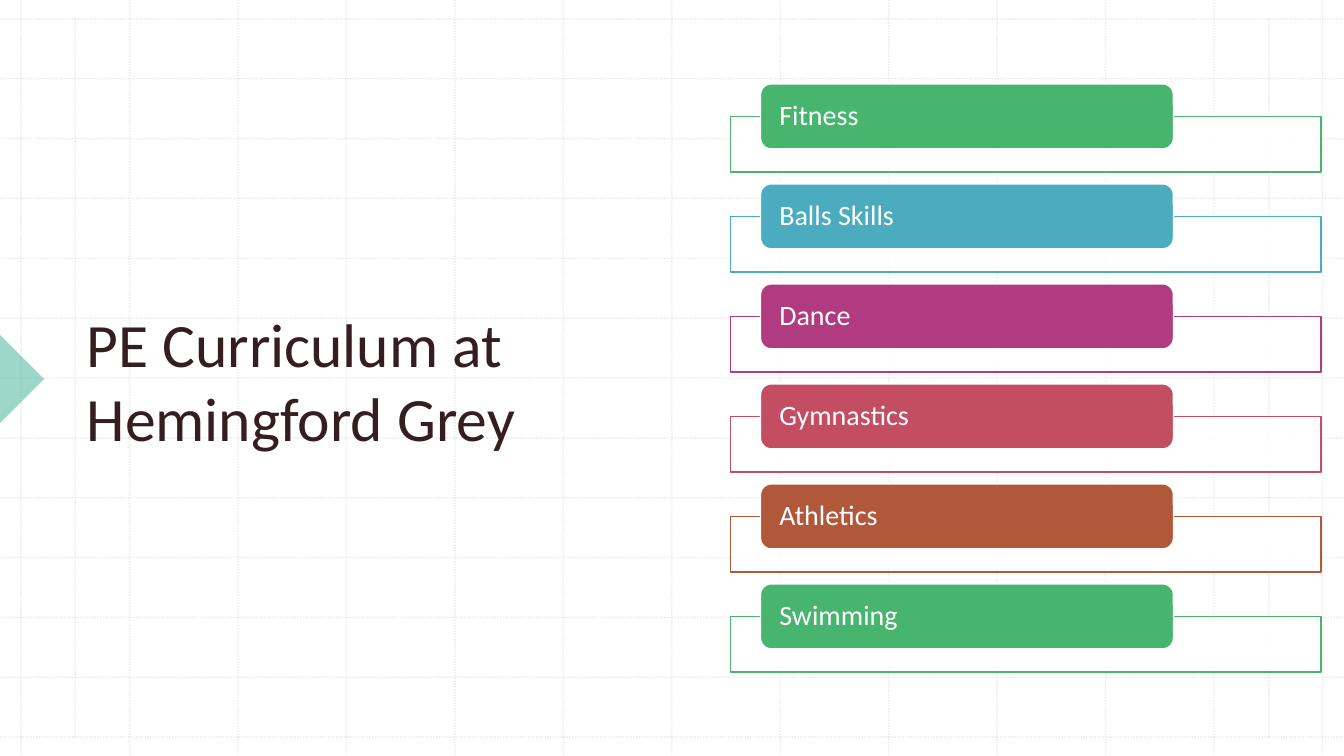
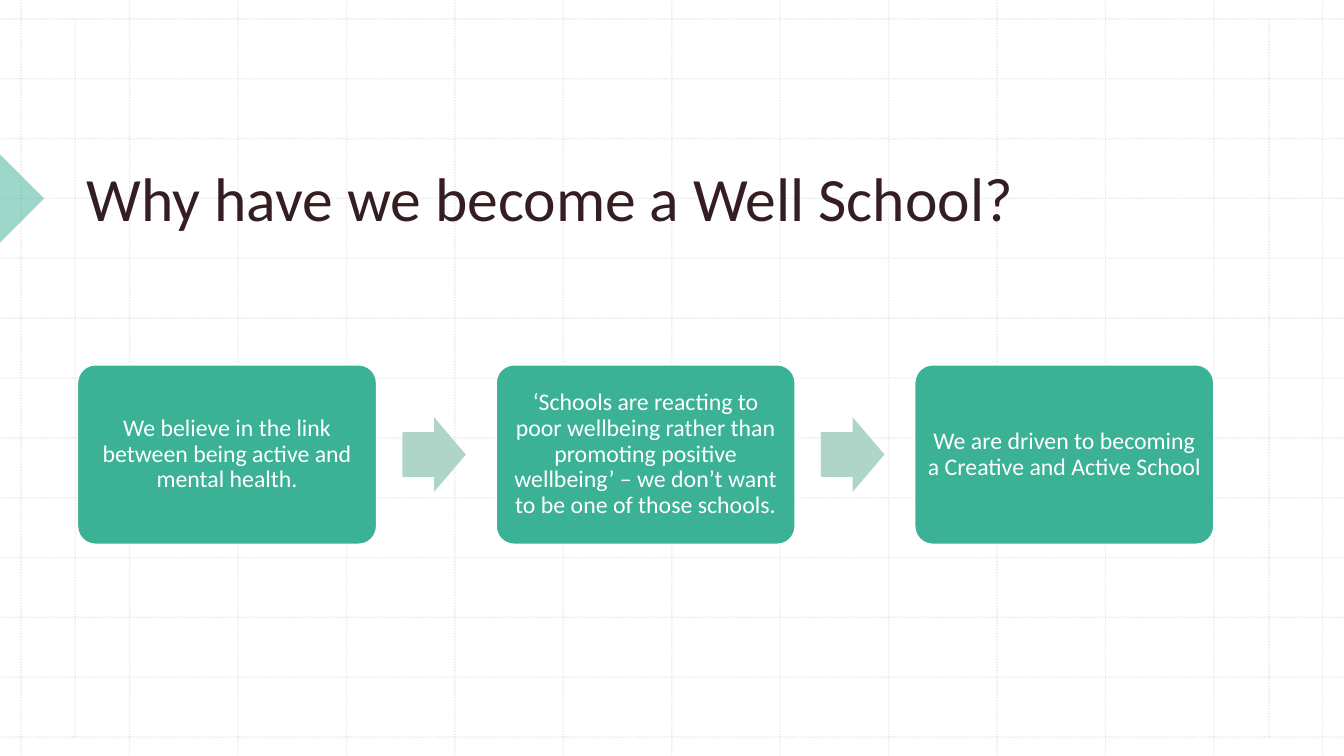
"""Build two slides on a school's PE curriculum and its Well School choice."""

from lxml import etree
from pptx import Presentation
from pptx.dml.color import RGBColor
from pptx.enum.dml import MSO_LINE
from pptx.enum.shapes import MSO_CONNECTOR, MSO_SHAPE
from pptx.enum.text import MSO_ANCHOR, MSO_AUTO_SIZE, PP_ALIGN
from pptx.oxml.ns import qn
from pptx.util import Pt

STRAIGHT = MSO_CONNECTOR.STRAIGHT
DOTTED = MSO_LINE.ROUND_DOT
RECTANGLE = MSO_SHAPE.RECTANGLE
ROUNDED = MSO_SHAPE.ROUNDED_RECTANGLE
TRIANGLE = MSO_SHAPE.RIGHT_TRIANGLE
ARROW = MSO_SHAPE.RIGHT_ARROW
LEFT, CENTER = PP_ALIGN.LEFT, PP_ALIGN.CENTER
MIDDLE, BOTTOM = MSO_ANCHOR.MIDDLE, MSO_ANCHOR.BOTTOM

FONT = "Calibri"
WIDTH, HEIGHT = 960, 540
COLORS = {
    "white": "FFFFFF",
    "title": "351E22",
    "grid": "BCBCBC",
    "teal": "3BB195",
    "pale teal": "AFD5C8",
    "green": "47B56D",
    "blue": "4BACC0",
    "purple": "B13B81",
    "red": "C34D61",
    "brown": "B1583B",
}


def write_text(shape, text, size, color="white", align=LEFT, anchor=MIDDLE,
               spacing=0.9, insets=(7.2, 3.6)):
    """Fill a shape with one formatted paragraph."""
    frame = shape.text_frame
    frame.word_wrap = True
    frame.auto_size = MSO_AUTO_SIZE.NONE
    frame.vertical_anchor = anchor
    frame.margin_left = frame.margin_right = Pt(insets[0])
    frame.margin_top = frame.margin_bottom = Pt(insets[1])
    frame.text = text
    paragraph = frame.paragraphs[0]
    paragraph.alignment = align
    paragraph.line_spacing = spacing
    paragraph.font.name = FONT
    paragraph.font.size = Pt(size)
    paragraph.font.color.rgb = RGBColor.from_string(COLORS[color])


def add_box(slide, kind, left, top, width, height, fill, line=None, opacity=100):
    """Add a filled preset shape with an optional outline."""
    shape = slide.shapes.add_shape(kind, Pt(left), Pt(top), Pt(width), Pt(height))
    shape.shadow.inherit = False
    shape.fill.solid()
    shape.fill.fore_color.rgb = RGBColor.from_string(COLORS[fill])
    if opacity < 100:
        color = next(shape.element.iter(qn("a:srgbClr")))
        etree.SubElement(color, qn("a:alpha"), val=str(opacity * 1000))
    if line:
        shape.line.color.rgb = RGBColor.from_string(COLORS[line])
        shape.line.width = Pt(1)
    else:
        shape.line.fill.background()
    return shape


presentation = Presentation()
presentation.slide_width, presentation.slide_height = Pt(WIDTH), Pt(HEIGHT)
layout = presentation.slide_layouts[5]
for placeholder in list(layout.placeholders):
    if placeholder.placeholder_format.idx != 0:
        layout.shapes.element.remove(placeholder.element)

pages = [
    ("PE Curriculum at Hemingford Grey", 426, 428.4, MIDDLE, 270.7),
    ("Why have we become a Well School?", 813, 113.8, BOTTOM, 141.8),
]
marker_size = 44.6
slides = []
for text, width, height, anchor, marker_middle in pages:
    slide = presentation.slides.add_slide(layout)
    title = slide.shapes.title
    title.left, title.top = Pt(54.7), Pt(56.9)
    title.width, title.height = Pt(width), Pt(height)
    write_text(title, text, 44, color="title", anchor=anchor, spacing=1.0)
    marker = add_box(slide, TRIANGLE, -marker_size / 2, marker_middle - marker_size / 2,
                     marker_size, marker_size, "teal", opacity=50)
    marker.rotation = 225
    slides.append(slide)
curriculum, reasons = slides

grid_left, grid_top, column, row = 15.1, 13.5, 77.46, 42.75
grid_bottom = grid_top + 12 * row
grid = [(grid_left + i * column, 0, grid_left + i * column, HEIGHT) for i in range(13)]
grid += [(0, grid_top + i * row, WIDTH, grid_top + i * row) for i in range(13)]
grid += [(x, grid_top, x, grid_bottom) for x in (53.8, 906.5)]
grid_lines = []
for ends in grid:
    connector = curriculum.shapes.add_connector(STRAIGHT, *[Pt(value) for value in ends])
    connector.line.color.rgb = RGBColor.from_string(COLORS["grid"])
    connector.line.width = Pt(1)
    connector.line.dash_style = DOTTED
    color = next(connector.element.iter(qn("a:srgbClr")))
    etree.SubElement(color, qn("a:alpha"), val="30000")
    etree.SubElement(connector.element.spPr, qn("a:effectLst"))
    grid_lines.append(connector.element)
for grid_line in grid_lines:
    layout.shapes.element.append(grid_line)

activities = [
    ("Fitness", "green"),
    ("Balls Skills", "blue"),
    ("Dance", "purple"),
    ("Gymnastics", "red"),
    ("Athletics", "brown"),
    ("Swimming", "green"),
]
for index, (activity, color) in enumerate(activities):
    top = 59.9 + index * 71.43
    add_box(curriculum, RECTANGLE, 522, top + 23.3, 421.5, 39.6, "white", color, opacity=90)
    label = add_box(curriculum, ROUNDED, 543.2, top, 295, 46.5, color, "white")
    write_text(label, activity, 20, insets=(11.2, 0))

statements = [
    "We believe in the link between being active and mental health.",
    "‘Schools are reacting to poor wellbeing rather than promoting positive "
    "wellbeing’ – we don’t want to be one of those schools.",
    "We are driven to becoming a Creative and Active School",
]
for index, statement in enumerate(statements):
    left = 55.4 + index * 299
    card = add_box(reasons, ROUNDED, left, 260.6, 213.6, 128.2, "teal", "white")
    card.adjustments[0] = 0.1
    write_text(card, statement, 17, align=CENTER, insets=(5, 5))
    if index < len(statements) - 1:
        arrow = add_box(reasons, ARROW, left + 232, 298.1, 45.4, 53.2, "pale teal")
        arrow.adjustments[0] = 0.6
        arrow.adjustments[1] = 0.5

presentation.save("out.pptx")
